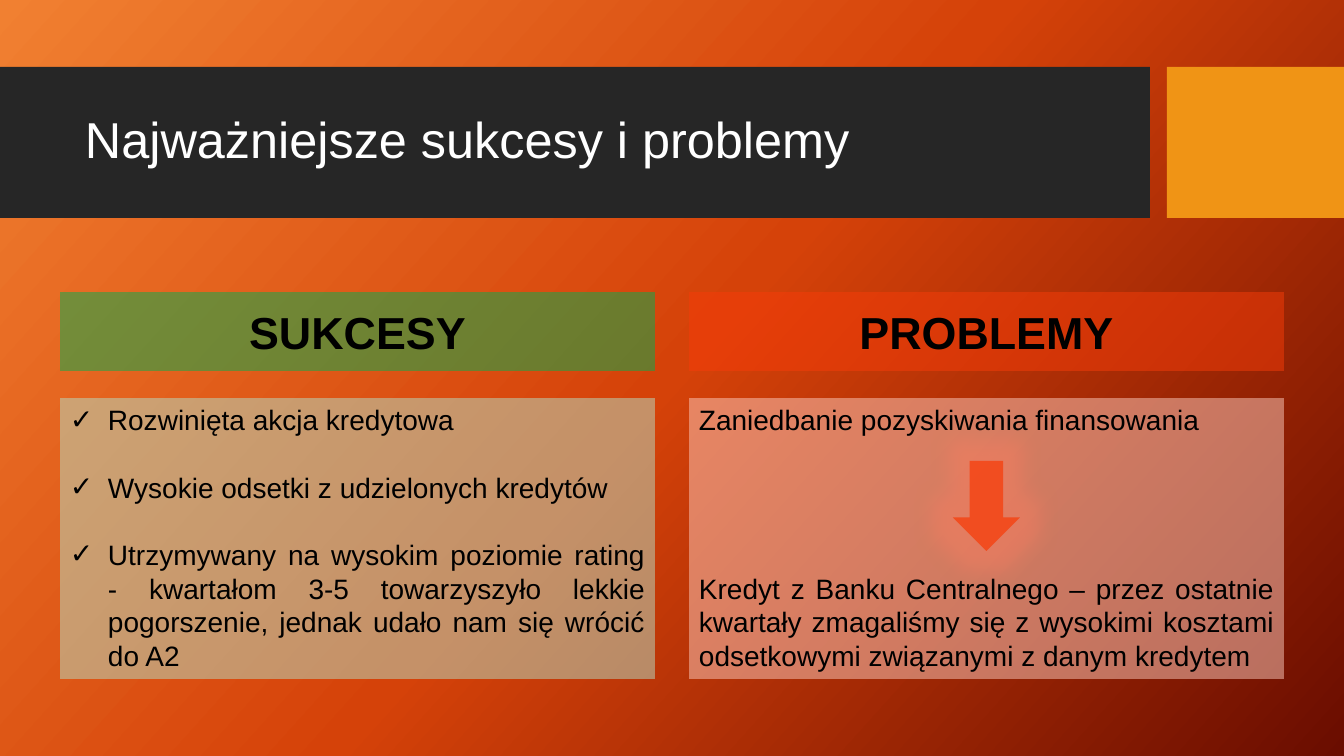
from copy import deepcopy
from pptx import Presentation
from pptx.dml.color import RGBColor as Rgb
from pptx.enum.shapes import MSO_SHAPE as Shape
from pptx.enum.text import MSO_ANCHOR as Anchor, PP_ALIGN as Align
from pptx.oxml.ns import qn
from pptx.util import Pt
from lxml.etree import SubElement

PX = 12192000 / 1344
THEME = {
    "font": "Arial", "title_size": 36, "head_size": 32, "body_size": 20,
    "line_gap": 24, "text": "000000", "title_text": "FFFFFF",
    "band": "262626", "accent": "F09415", "arrow": "F73C09", "glow": "FF7F60",
    "sky": [(0, "F18031"), (0.5, "D54209"), (1, "6A0D00")],
}
COLUMNS = [
    {"title": "SUKCESY", "head": "00B050", "body": "B6E0C7", "bullet": "✓", "gap_lines": 1,
     "lines": ["Rozwinięta akcja kredytowa",
               "Wysokie odsetki z udzielonych kredytów",
               "Utrzymywany na wysokim poziomie rating - kwartałom 3-5 towarzyszyło "
               "lekkie pogorszenie, jednak udało nam się wrócić do A2"]},
    {"title": "PROBLEMY", "head": "F73C09", "body": "FDCBBE", "bullet": None, "gap_lines": 4,
     "lines": ["Zaniedbanie pozyskiwania finansowania",
               "Kredyt z Banku Centralnego – przez ostatnie kwartały zmagaliśmy się "
               "z wysokimi kosztami odsetkowymi związanymi z danym kredytem"]},
]


def add_block(place, color, alpha=100, kind=Shape.RECTANGLE):
    block = page.shapes.add_shape(kind, *[round(value * PX) for value in place])
    block.shadow.inherit = False
    block.line.fill.background()
    block.fill.solid()
    block.fill.fore_color.rgb = Rgb.from_string(color)
    if alpha < 100:
        tint = block.element.spPr.find(".//" + qn("a:srgbClr"))
        SubElement(tint, qn("a:alpha"), val=str(alpha * 1000))
    return block


def write(box, lines, size, color, align, anchor, bold=False, gap=0, bullet=None):
    frame = box.text_frame
    frame.word_wrap = True
    frame.vertical_anchor = anchor
    for index, line in enumerate(lines):
        para = frame.add_paragraph() if index else frame.paragraphs[0]
        para.alignment = align
        if index:
            para.space_before = Pt(gap)
        if bullet:
            props = para._p.get_or_add_pPr()
            props.set("marL", str(round(38 * PX)))
            props.set("indent", str(round(-38 * PX)))
            SubElement(props, qn("a:buFont"), typeface=THEME["font"])
            SubElement(props, qn("a:buChar"), char=bullet)
        span = para.add_run()
        span.text = line
        look = {"name": THEME["font"], "size": Pt(size), "bold": bold}
        for name, value in look.items():
            setattr(span.font, name, value)
        span.font.color.rgb = Rgb.from_string(color)


deck = Presentation()
deck.slide_width, deck.slide_height = round(1344 * PX), round(756 * PX)
page = deck.slides.add_slide(deck.slide_layouts[6])

page.background.fill.gradient()
page.background.fill.gradient_angle = 318
stops = page.element.find(".//" + qn("a:gsLst"))
stops.append(deepcopy(stops[-1]))
for stop, (position, color) in zip(page.background.fill.gradient_stops, THEME["sky"]):
    stop.position = position
    stop.color.rgb = Rgb.from_string(color)

add_block((0, 67, 1150, 151), THEME["band"])
add_block((1167, 67, 177, 151), THEME["accent"])
title = page.shapes.add_textbox(*[round(value * PX) for value in (75, 83, 1059, 119)])
write(title, ["Najważniejsze sukcesy i problemy"], THEME["title_size"],
      THEME["title_text"], Align.LEFT, Anchor.MIDDLE)
title.text_frame.paragraphs[0].line_spacing = 0.9

for index, column in enumerate(COLUMNS):
    left = 60 + index * 629
    head = add_block((left, 292, 595, 79), column["head"], 50)
    write(head, [column["title"]], THEME["head_size"], THEME["text"],
          Align.CENTER, Anchor.MIDDLE, bold=True)
    body = add_block((left, 398, 595, 281), column["body"], 50)
    write(body, column["lines"], THEME["body_size"], THEME["text"], Align.JUSTIFY, Anchor.TOP,
          gap=column["gap_lines"] * THEME["line_gap"], bullet=column["bullet"])

arrow = add_block((953, 461, 67, 90), THEME["arrow"], 73, Shape.DOWN_ARROW)
effects = arrow.element.spPr.find(qn("a:effectLst"))
glow = SubElement(effects, qn("a:glow"), rad=str(round(40 * PX)))
halo = SubElement(glow, qn("a:srgbClr"), val=THEME["glow"])
SubElement(halo, qn("a:alpha"), val="40000")

deck.save("out.pptx")
